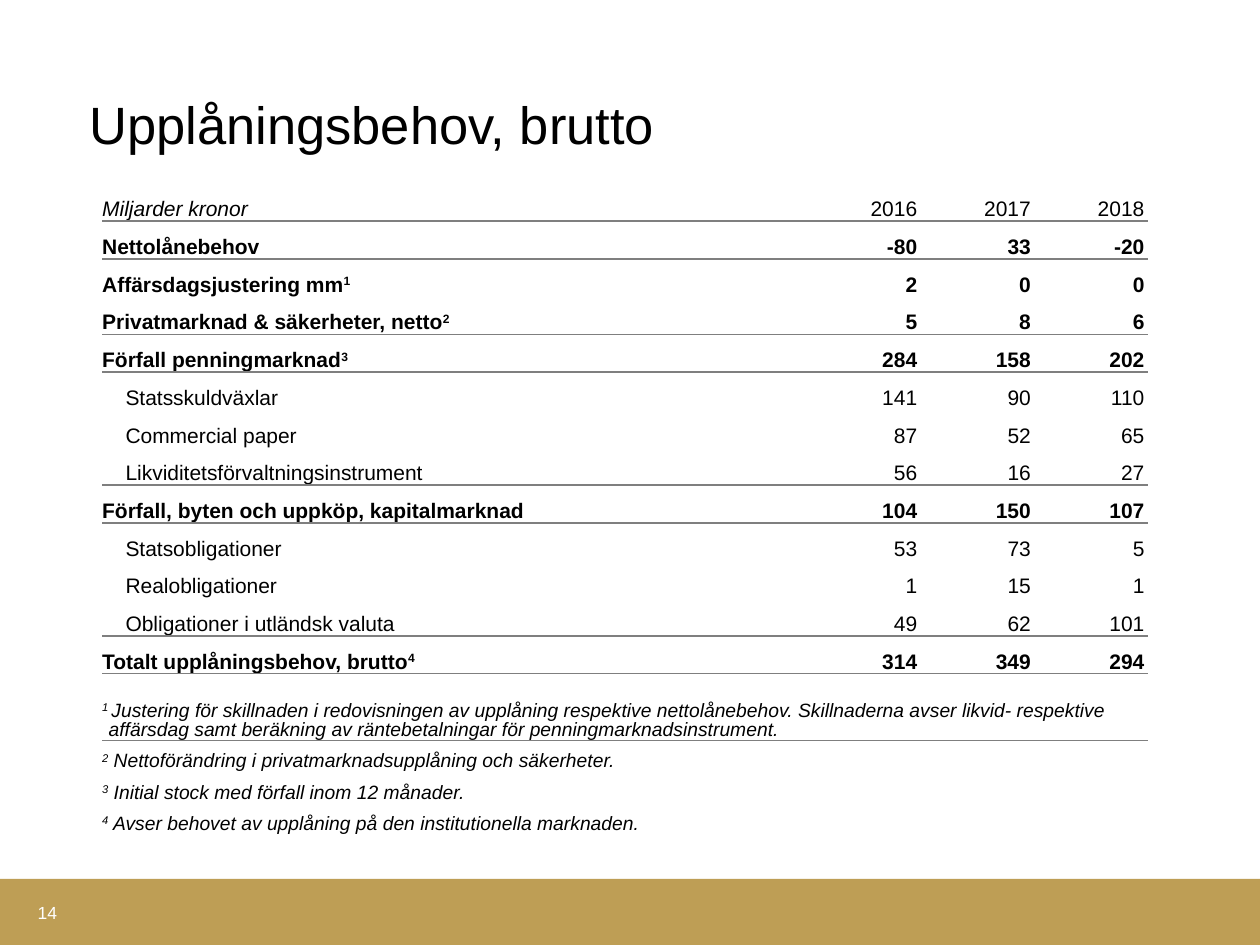
from lxml import etree
from pptx import Presentation
from pptx.dml.color import RGBColor
from pptx.enum.shapes import MSO_SHAPE
from pptx.enum.text import MSO_ANCHOR, MSO_AUTO_SIZE, PP_ALIGN
from pptx.oxml.ns import qn
from pptx.util import Cm, Pt

RECTANGLE = MSO_SHAPE.RECTANGLE
BOTTOM, MIDDLE = MSO_ANCHOR.BOTTOM, MSO_ANCHOR.MIDDLE
LEFT, RIGHT = PP_ALIGN.LEFT, PP_ALIGN.RIGHT
NO_AUTOFIT = MSO_AUTO_SIZE.NONE

FONT = "Arial"
BLACK, WHITE, GOLD, GREY = "000000", "FFFFFF", "BE9E55", "7F7F7F"
PLAIN_TABLE_STYLE = "{2D5ABB26-0587-4C30-8999-92F81FD0307C}"

COLUMN_WIDTHS = [14.17, 2.34, 2.29, 2.29]
ROW_HEIGHT = 0.76
FIRST_NOTE_HEIGHT, NOTE_HEIGHT = 1.35, 0.63
CELL_MARGIN, SUBITEM_INDENT = 0.08, 0.47

HEADER = ["Miljarder kronor", "2016", "2017", "2018"]

# Each group is closed by a rule: (heading, footnote mark, values, is subitem)
GROUPS = [
    [("Nettolånebehov", "", (-80, 33, -20), False),
     ("Affärsdagsjustering mm", "1", (2, 0, 0), False),
     ("Privatmarknad & säkerheter, netto", "2", (5, 8, 6), False)],
    [("Förfall penningmarknad", "3", (284, 158, 202), False),
     ("Statsskuldväxlar", "", (141, 90, 110), True),
     ("Commercial paper", "", (87, 52, 65), True),
     ("Likviditetsförvaltningsinstrument", "", (56, 16, 27), True)],
    [("Förfall, byten och uppköp, kapitalmarknad", "", (104, 150, 107), False),
     ("Statsobligationer", "", (53, 73, 5), True),
     ("Realobligationer", "", (1, 15, 1), True),
     ("Obligationer i utländsk valuta", "", (49, 62, 101), True)],
    [("Totalt upplåningsbehov, brutto", "4", (314, 349, 294), False)],
]

NOTES = [
    "Justering för skillnaden i redovisningen av upplåning respektive "
    "nettolånebehov. Skillnaderna avser likvid- respektive affärsdag samt "
    "beräkning av räntebetalningar för penningmarknadsinstrument.",
    "Nettoförändring i privatmarknadsupplåning och säkerheter.",
    "Initial stock med förfall inom 12 månader.",
    "Avser behovet av upplåning på den institutionella marknaden.",
]


def rgb(hex_color):
    return RGBColor.from_string(hex_color)


def style_runs(paragraph, size, color=BLACK, bold=False, italic=False):
    for run in paragraph.runs:
        run.font.name = FONT
        run.font.size = Pt(size)
        run.font.color.rgb = rgb(color)
        run.font.bold = bold
        run.font.italic = italic


def superscript(run):
    run._r.get_or_add_rPr().set("baseline", "30000")


def zero_margins(frame):
    frame.margin_left = frame.margin_right = 0
    frame.margin_top = frame.margin_bottom = 0


def add_border(cell, side):
    line = etree.SubElement(cell._tc.get_or_add_tcPr(), qn("a:" + side),
                            w=str(Pt(1)))
    fill = etree.SubElement(line, qn("a:solidFill"))
    etree.SubElement(fill, qn("a:srgbClr"), val=GREY)


def prepare_cell(cell, left, rule_above=False, rule_below=False):
    """Set margins, rules and fill; return the paragraph to write in."""
    cell.margin_left, cell.margin_right = Cm(left), Cm(CELL_MARGIN)
    cell.margin_top = cell.margin_bottom = 0
    cell.vertical_anchor = BOTTOM
    if rule_above:
        add_border(cell, "lnT")
    if rule_below:
        add_border(cell, "lnB")
    cell.fill.background()
    return cell.text_frame.paragraphs[0]


def fill_row(row, texts, mark="", bold=False, italic_label=False,
             subitem=False, rule_above=False, rule_below=False):
    for column, (cell, text) in enumerate(zip(row.cells, texts)):
        is_label = column == 0
        label_margin = SUBITEM_INDENT if subitem else 0
        paragraph = prepare_cell(cell, label_margin if is_label else CELL_MARGIN,
                                 rule_above, rule_below)
        paragraph.text = text
        paragraph.alignment = LEFT if is_label else RIGHT
        paragraph.line_spacing = Pt(11)
        paragraph.space_before = Pt(2 if rule_above else 0)
        paragraph.space_after = Pt(2 if rule_below else 0)
        if is_label and mark:
            mark_run = paragraph.add_run()
            mark_run.text = mark
            superscript(mark_run)
        style_runs(paragraph, 12, bold=bold, italic=italic_label and is_label)


def fill_note(row, number, note):
    first = number == 1
    cells = list(row.cells)
    cells[0].merge(cells[-1])
    paragraph = prepare_cell(cells[0], 0, rule_above=first)
    hanging = Cm(0.13)
    properties = paragraph._p.get_or_add_pPr()
    properties.set("marL", str(hanging))
    properties.set("indent", str(-hanging))
    paragraph.line_spacing = Pt(11 if first else 9)
    paragraph.space_before = Pt(6 if first else 3)
    paragraph.text = f"{number} " if first else str(number)
    superscript(paragraph.runs[0])
    paragraph.add_run().text = note if first else " " + note
    style_runs(paragraph, 11, italic=True)


def add_borrowing_table(slide):
    items = [(item, item is group[0], item is group[-1])
             for group in GROUPS for item in group]
    heights = ([ROW_HEIGHT] * (len(items) + 1) + [FIRST_NOTE_HEIGHT]
               + [NOTE_HEIGHT] * (len(NOTES) - 1))
    table = slide.shapes.add_table(
        len(heights), len(COLUMN_WIDTHS), Cm(2.06), Cm(3.7),
        Cm(sum(COLUMN_WIDTHS)), Cm(sum(heights))).table
    table.first_row = table.horz_banding = False
    table._tbl.tblPr.find(qn("a:tableStyleId")).text = PLAIN_TABLE_STYLE
    for column, width in zip(table.columns, COLUMN_WIDTHS):
        column.width = Cm(width)
    for row, height in zip(table.rows, heights):
        row.height = Cm(height)

    rows = iter(table.rows)
    fill_row(next(rows), HEADER, italic_label=True, rule_below=True)
    for (label, mark, values, subitem), opens, closes in items:
        fill_row(next(rows), [label, *map(str, values)], mark,
                 bold=not subitem, subitem=subitem,
                 rule_above=opens, rule_below=closes)
    for number, note in enumerate(NOTES, 1):
        fill_note(next(rows), number, note)


def add_title(slide, text):
    title = slide.shapes.title
    title.left, title.top = Cm(1.8), Cm(0.61)
    title.width, title.height = Cm(21.79), Cm(2.51)
    frame = title.text_frame
    frame.text = text
    frame.auto_size = NO_AUTOFIT
    frame.vertical_anchor = BOTTOM
    zero_margins(frame)
    frame.paragraphs[0].alignment = LEFT
    style_runs(frame.paragraphs[0], 30)


def add_footer(slide, page_number):
    band = slide.shapes.add_shape(RECTANGLE, 0, Cm(17.72), Cm(25.4), Cm(1.33))
    band.shadow.inherit = False
    band.fill.solid()
    band.fill.fore_color.rgb = rgb(GOLD)
    band.line.fill.background()

    page = slide.shapes.add_textbox(Cm(0.76), Cm(18.19), Cm(0.79), Cm(0.41))
    frame = page.text_frame
    frame.text = page_number
    frame.word_wrap = True
    frame.vertical_anchor = MIDDLE
    zero_margins(frame)
    style_runs(frame.paragraphs[0], 10, WHITE)


def main():
    presentation = Presentation()
    presentation.slide_width, presentation.slide_height = Cm(25.4), Cm(19.05)
    title_only = presentation.slide_layouts[5]
    slide = presentation.slides.add_slide(title_only)
    add_footer(slide, "14")
    add_title(slide, "Upplåningsbehov, brutto")
    add_borrowing_table(slide)
    presentation.save("out.pptx")


if __name__ == "__main__":
    main()
